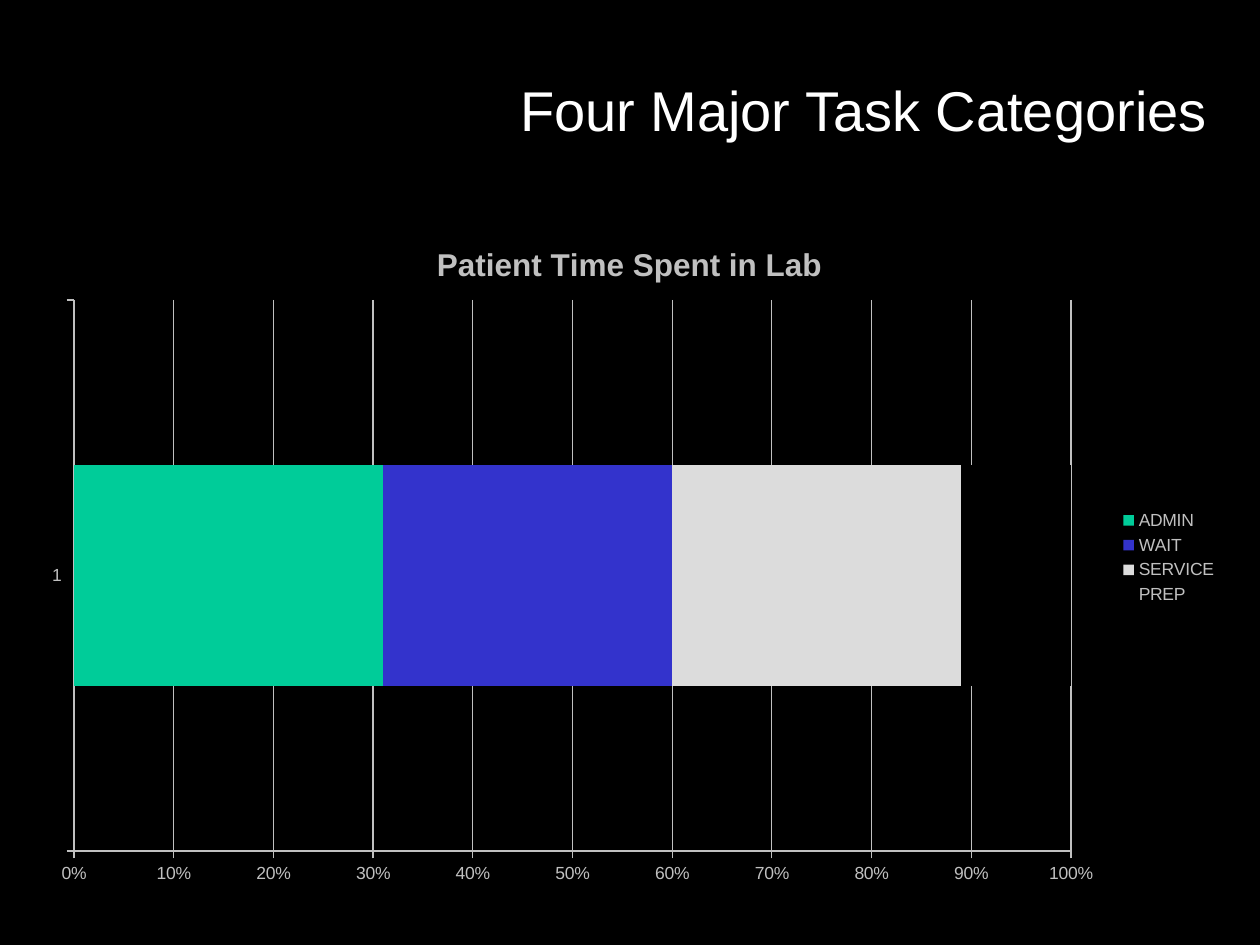
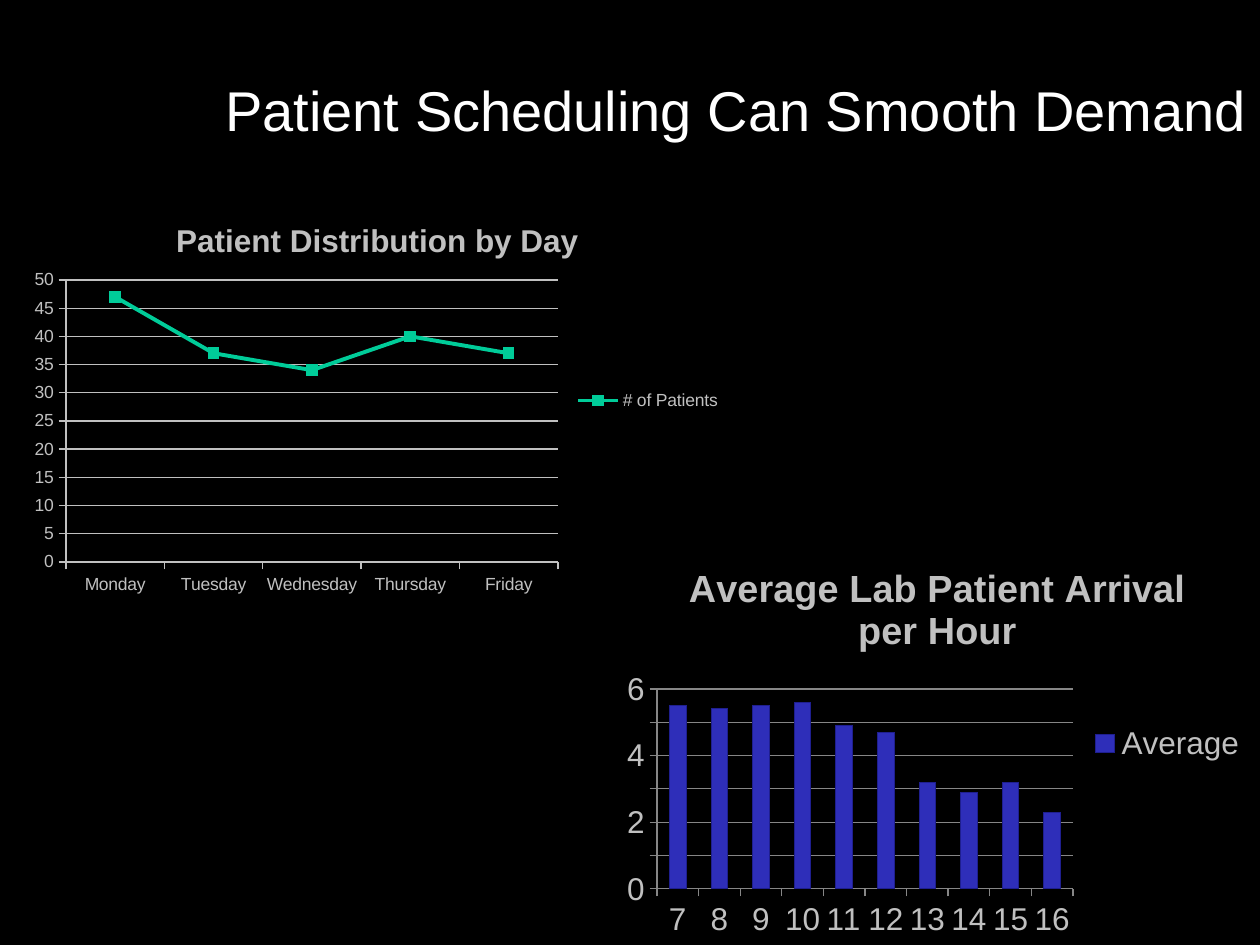
"""Build two slides on patient time and patient demand in a lab."""
import pptx
import pptx.chart.data
import pptx.dml.color
import pptx.enum.chart
import pptx.enum.text
import pptx.oxml
import pptx.oxml.ns
import pptx.util

RGBColor = pptx.dml.color.RGBColor
ChartType = pptx.enum.chart.XL_CHART_TYPE
BLACK = RGBColor(0x00, 0x00, 0x00)
WHITE = RGBColor(0xFF, 0xFF, 0xFF)
SILVER = RGBColor(0xC0, 0xC0, 0xC0)
GREY = RGBColor(0x86, 0x86, 0x86)
GREEN = RGBColor(0x00, 0xCC, 0x99)
BLUE = RGBColor(0x33, 0x33, 0xCC)
DEEP_BLUE = RGBColor(0x2E, 0x2E, 0xB9)
NAVY = RGBColor(0x1F, 0x1F, 0x8F)
PALE = RGBColor(0xDC, 0xDC, 0xDC)
FONT = "Arial"
PX = 914400 / 126


def px(*lengths):
    return [pptx.util.Emu(round(length * PX)) for length in lengths]


def write_text(para, text, size=18, color=SILVER, bold=False, align=None):
    para.alignment = align
    span = para.add_run()
    span.text = text
    span.font.name = FONT
    span.font.size = pptx.util.Pt(size)
    span.font.bold = bold
    span.font.color.rgb = color


task_chart = {
    "title": "Patient Time Spent in Lab", "title_size": 18, "size": 10,
    "type": ChartType.BAR_STACKED_100, "frame": (29, 218, 1201, 679),
    "plot": (74, 300, 997, 551), "categories": ["1"],
    "series": [("ADMIN", [31], GREEN), ("WAIT", [29], BLUE),
               ("SERVICE", [29], PALE), ("PREP", [11], BLACK)],
    "top": 1, "step": 0.1, "format": "0%", "grid": SILVER,
}
day_chart = {
    "title": "Patient Distribution by Day", "title_size": 18, "size": 10,
    "type": ChartType.LINE_MARKERS_STACKED, "frame": (21, 199, 713, 403),
    "plot": (66, 280, 492, 282),
    "categories": ["Monday", "Tuesday", "Wednesday", "Thursday", "Friday"],
    "series": [("# of Patients", [47, 37, 34, 40, 37], GREEN)],
    "top": 50, "step": 5, "format": "0", "grid": SILVER,
}
hour_chart = {
    "title": "Average Lab Patient Arrival per Hour", "title_size": 21.6, "size": 18,
    "type": ChartType.COLUMN_CLUSTERED, "frame": (615, 542, 645, 403),
    "plot": (657, 689, 416, 200),
    "categories": [str(hour) for hour in range(7, 17)],
    "series": [("Average", [5.5, 5.4, 5.5, 5.6, 4.9, 4.7, 3.2, 2.9, 3.2, 2.3], DEEP_BLUE)],
    "top": 6, "step": 1, "format": "0", "grid": GREY, "outline": NAVY,
}
pages = [
    ("Four Major Task Categories", 1012, [task_chart]),
    ("Patient Scheduling Can Smooth Demand", 1052, [day_chart, hour_chart]),
]

deck = pptx.Presentation()
deck.slide_width, deck.slide_height = px(1260, 945)
deck.slide_master.background.fill.solid()
deck.slide_master.background.fill.fore_color.rgb = BLACK

for heading, heading_width, charts in pages:
    page = deck.slides.add_slide(deck.slide_layouts[6])
    box = page.shapes.add_textbox(*px(208, 48, heading_width, 123))
    box.text_frame.word_wrap = True
    box.text_frame.vertical_anchor = pptx.enum.text.MSO_ANCHOR.MIDDLE
    write_text(box.text_frame.paragraphs[0], heading, size=32, color=WHITE,
               align=pptx.enum.text.PP_ALIGN.RIGHT)

    for item in charts:
        data = pptx.chart.data.CategoryChartData()
        data.categories = item["categories"]
        for name, values, color in item["series"]:
            data.add_series(name, values)
        chart = page.shapes.add_chart(item["type"], *px(*item["frame"]), data).chart
        chart.font.name = FONT
        chart.font.size = pptx.util.Pt(item["size"])
        chart.font.color.rgb = SILVER
        chart.has_title = True
        write_text(chart.chart_title.text_frame.paragraphs[0], item["title"],
                   size=item["title_size"], bold=True)
        chart.chart_title.include_in_layout = False
        chart.has_legend = True
        chart.legend.position = pptx.enum.chart.XL_LEGEND_POSITION.RIGHT
        chart.legend.include_in_layout = False

        plot = chart.plots[0]
        plot.vary_by_categories = False
        is_line = item["type"] == ChartType.LINE_MARKERS_STACKED
        if not is_line:
            plot.gap_width = 150
            plot.overlap = 100 if item["type"] == ChartType.BAR_STACKED_100 else 0
        for series, (name, values, color) in zip(plot.series, item["series"]):
            if is_line:
                series.smooth = False
                series.format.line.color.rgb = color
                series.format.line.width = pptx.util.Pt(2.25)
                series.marker.style = pptx.enum.chart.XL_MARKER_STYLE.SQUARE
                series.marker.size = 6
                shade = series.marker.format
            else:
                shade = series.format
            shade.fill.solid()
            shade.fill.fore_color.rgb = color
            if "outline" in item or is_line:
                shade.line.color.rgb = item.get("outline", color)
            else:
                shade.line.fill.background()

        scale = chart.value_axis
        scale.minimum_scale = 0
        scale.maximum_scale = item["top"]
        scale.major_unit = item["step"]
        scale.tick_labels.number_format = item["format"]
        scale.tick_labels.number_format_is_linked = False
        scale.has_major_gridlines = True
        chart.category_axis.has_major_gridlines = False
        for axis in (scale, chart.category_axis):
            axis.major_tick_mark = pptx.enum.chart.XL_TICK_MARK.OUTSIDE
            axis.minor_tick_mark = pptx.enum.chart.XL_TICK_MARK.NONE
        for edge in (scale, chart.category_axis, scale.major_gridlines):
            edge.format.line.color.rgb = item["grid"]
            edge.format.line.width = pptx.util.Pt(0.75)

        left, top, width, height = item["frame"]
        plot_left, plot_top, plot_width, plot_height = item["plot"]
        shares = {
            "x": (plot_left - left) / width, "y": (plot_top - top) / height,
            "w": plot_width / width, "h": plot_height / height,
        }
        modes = "".join(f'<c:{key}Mode val="edge"/>' for key in "xy")
        parts = "".join(f'<c:{key} val="{share:.4f}"/>' for key, share in shares.items())
        layout = pptx.oxml.parse_xml(
            f'<c:layout {pptx.oxml.ns.nsdecls("c")}><c:manualLayout>'
            f'<c:layoutTarget val="inner"/>{modes}{parts}</c:manualLayout></c:layout>')
        plot_area = chart.element.chart.plotArea
        for old_layout in plot_area.findall(pptx.oxml.ns.qn("c:layout")):
            plot_area.remove(old_layout)
        plot_area.insert(0, layout)

deck.save("out.pptx")
